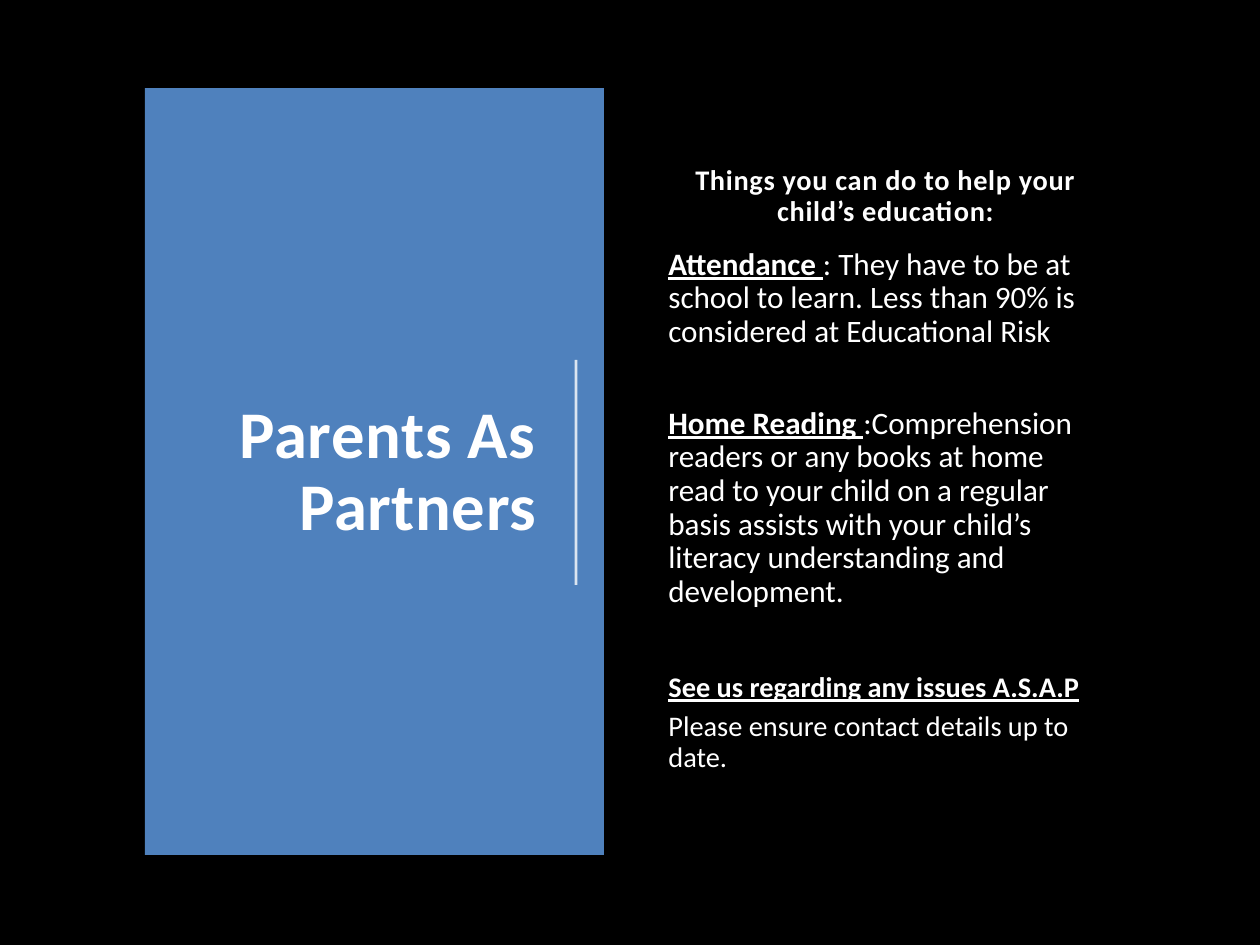
"""Builds the Parents As Partners slide."""
import pptx
import pptx.dml.color
import pptx.enum.shapes
import pptx.enum.text
import pptx.oxml
import pptx.oxml.ns
import pptx.util

RGBColor = pptx.dml.color.RGBColor
Align = pptx.enum.text.PP_ALIGN
Anchor = pptx.enum.text.MSO_ANCHOR
Pt = pptx.util.Pt

BLACK = RGBColor(0x00, 0x00, 0x00)
WHITE = RGBColor(0xFF, 0xFF, 0xFF)
OFF_WHITE = RGBColor(0xFE, 0xFE, 0xFE)
BLUE = RGBColor(0x4F, 0x81, 0xBD)

SCALE = 914400 // 126
PANEL = (145, 88, 459, 767)
TITLE_BOX = (199, 160, 350, 625)
DIVIDER = (576, 360, 576, 585)
ADVICE_LEFT, ADVICE_TOP, ADVICE_WIDTH, ADVICE_GAP = 656, 160, 459, 8

PLAIN, BOLD, KEY = {}, {"bold": True}, {"bold": True, "underline": True}
TITLE = [[("Parents As Partners", BOLD)]]
ADVICE = [
    (74, [[("Things you can do to help your child’s education:", BOLD)]],
     {"size": 16.2, "color": OFF_WHITE, "align": Align.CENTER,
      "spacing": 40, "outline": BLUE}),
    (151, [[("Attendance ", KEY),
            (": They have to be at school to learn. Less than 90% is "
             "considered at Educational Risk", PLAIN)]], {"size": 17.8}),
    (258, [[("Home Reading ", KEY),
            (":Comprehension readers or any books at home read to your child "
             "on a regular basis assists with your child’s literacy "
             "understanding and development.", PLAIN)]], {"size": 17.8}),
    (118, [[("See us regarding any issues A.S.A.P", KEY)],
           [("Please ensure contact details up to date.", PLAIN)]],
     {"size": 16.2}),
]


def emu(*lengths):
    return [pptx.util.Emu(length * SCALE) for length in lengths]


def add_text(page, place, paragraphs, size, color=WHITE, align=Align.LEFT,
             anchor=Anchor.TOP, spacing=0, outline=None):
    frame = page.shapes.add_textbox(*emu(*place)).text_frame
    frame.word_wrap = True
    frame.vertical_anchor = anchor
    for index, spans in enumerate(paragraphs):
        para = frame.add_paragraph() if index else frame.paragraphs[0]
        para.alignment = align
        para.line_spacing = 0.9
        para.space_after = Pt(4.9)
        for text, style in spans:
            span = para.add_run()
            span.text = text
            span.font.name = "Calibri"
            span.font.size = Pt(size)
            span.font.bold = style.get("bold", False)
            span.font.underline = style.get("underline", False)
            span.font.color.rgb = color
            properties = span.font._element
            if spacing:
                properties.set("spc", str(spacing))
            if outline:
                properties.insert(0, pptx.oxml.parse_xml(
                    f'<a:ln {pptx.oxml.ns.nsdecls("a")} w="{Pt(0.75)}"><a:solidFill>'
                    f'<a:srgbClr val="{outline}"/></a:solidFill></a:ln>'))


def add_divider(page):
    divider = page.shapes.add_connector(
        pptx.enum.shapes.MSO_CONNECTOR.STRAIGHT, *emu(*DIVIDER))
    divider.line.color.rgb = WHITE
    divider.line.width = Pt(1.5)
    properties = divider._element.spPr
    color = properties.find(".//" + pptx.oxml.ns.qn("a:srgbClr"))
    color.append(pptx.oxml.parse_xml(
        f'<a:alpha {pptx.oxml.ns.nsdecls("a")} val="80000"/>'))
    properties.append(pptx.oxml.parse_xml(
        f'<a:effectLst {pptx.oxml.ns.nsdecls("a")}/>'))


def main():
    deck = pptx.Presentation()
    deck.slide_width, deck.slide_height = emu(1260, 945)
    page = deck.slides.add_slide(deck.slide_layouts[6])
    page.background.fill.solid()
    page.background.fill.fore_color.rgb = BLACK

    panel = page.shapes.add_shape(
        pptx.enum.shapes.MSO_SHAPE.RECTANGLE, *emu(*PANEL))
    panel.shadow.inherit = False
    panel.fill.solid()
    panel.fill.fore_color.rgb = BLUE
    panel.line.fill.background()

    add_text(page, TITLE_BOX, TITLE, size=38.1, align=Align.RIGHT,
             anchor=Anchor.MIDDLE, spacing=40)
    add_divider(page)

    top = ADVICE_TOP
    for height, paragraphs, style in ADVICE:
        add_text(page, (ADVICE_LEFT, top, ADVICE_WIDTH, height), paragraphs, **style)
        top += height + ADVICE_GAP

    deck.save("out.pptx")


if __name__ == "__main__":
    main()
